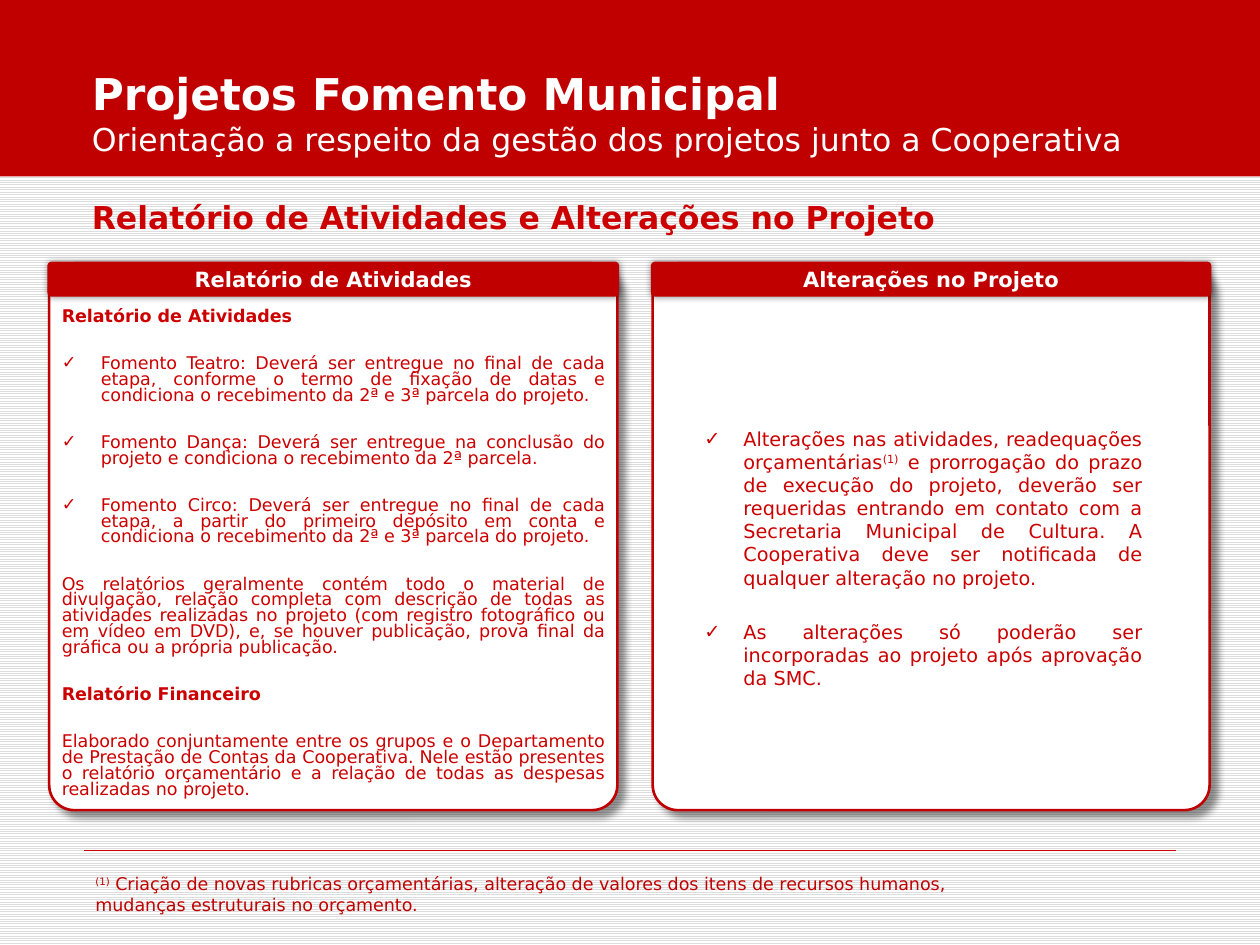
from lxml import etree
from pptx import Presentation
from pptx.dml.color import RGBColor
from pptx.enum.dml import MSO_PATTERN
from pptx.enum.shapes import MSO_CONNECTOR, MSO_SHAPE
from pptx.enum.text import MSO_ANCHOR, MSO_AUTO_SIZE, PP_ALIGN
from pptx.oxml.ns import qn
from pptx.util import Inches, Pt

TOP, MIDDLE, BOTTOM = MSO_ANCHOR.TOP, MSO_ANCHOR.MIDDLE, MSO_ANCHOR.BOTTOM
LEFT, CENTER, JUSTIFY = PP_ALIGN.LEFT, PP_ALIGN.CENTER, PP_ALIGN.JUSTIFY
COLORS = {"band": "C00000", "text": "CC0000", "white": "FFFFFF", "stripe": "DDDDDD"}
FONT = "DejaVu Sans"
HANGING = Inches(0.31)
TWO_CONTENT_LAYOUT = 3

# Each paragraph: (style, list of text runs); a run "(1)" is a note mark.
ACTIVITIES = [
    ("heading", ["Relatório de Atividades"]),
    ("check", ["Fomento Teatro: Deverá ser entregue no final de cada etapa, conforme o termo de "
               "fixação de datas e condiciona o recebimento da 2ª e 3ª parcela do projeto."]),
    ("check", ["Fomento Dança: Deverá ser entregue na conclusão do projeto e condiciona o "
               "recebimento da 2ª parcela."]),
    ("check", ["Fomento Circo: Deverá ser entregue no final de cada etapa, a partir do primeiro "
               "depósito em conta e condiciona o recebimento da 2ª e 3ª parcela do projeto."]),
    ("plain", ["Os relatórios geralmente contém todo o material de divulgação, relação completa "
               "com descrição de todas as atividades realizadas no projeto (com registro "
               "fotográfico ou em vídeo em DVD), e, se houver publicação, prova final da gráfica "
               "ou a própria publicação."]),
    ("heading", ["Relatório Financeiro"]),
    ("plain", ["Elaborado conjuntamente entre os grupos e o Departamento de Prestação de Contas "
               "da Cooperativa. Nele estão presentes o relatório orçamentário e a relação de "
               "todas as despesas realizadas no projeto."]),
]
CHANGES = [
    ("check", ["Alterações nas atividades, readequações orçamentárias", "(1)",
               " e prorrogação do prazo de execução do projeto, deverão ser requeridas entrando "
               "em contato com a Secretaria Municipal de Cultura. A Cooperativa deve ser "
               "notificada de qualquer alteração no projeto."]),
    ("check", ["As alterações só poderão ser incorporadas ao projeto após aprovação da SMC."]),
]
FOOTNOTE = ["(1)", " Criação de novas rubricas orçamentárias, alteração de valores dos itens de "
            "recursos humanos, mudanças estruturais no orçamento."]


def color(key):
    return RGBColor.from_string(COLORS[key])


def set_frame(frame, anchor=TOP):
    settings = {"word_wrap": True, "auto_size": MSO_AUTO_SIZE.NONE, "vertical_anchor": anchor}
    for name, value in settings.items():
        setattr(frame, name, value)
    return frame


def place(shape, box):
    for name, value in zip(("left", "top", "width", "height"), box):
        setattr(shape, name, Inches(value))


def next_paragraph(frame):
    first = frame.paragraphs[0]
    return frame.add_paragraph() if first.runs else first


def add_runs(paragraph, texts, size, color_key="text", bold=False):
    for text in texts:
        run = paragraph.add_run()
        run.text = text
        for name, value in {"name": FONT, "size": Pt(size), "bold": bold}.items():
            setattr(run.font, name, value)
        run.font.color.rgb = color(color_key)
        if text == "(1)":
            run.font._element.set("baseline", "30000")


def set_bullet(paragraph, char=None):
    """Give a hanging bullet, or take the inherited one away."""
    properties = paragraph._p.get_or_add_pPr()
    indent = HANGING if char else 0
    properties.set("marL", str(indent))
    properties.set("indent", str(-indent))
    if char:
        etree.SubElement(properties, qn("a:buFont"), typeface=FONT)
        etree.SubElement(properties, qn("a:buChar"), char=char)
    else:
        etree.SubElement(properties, qn("a:buNone"))


def add_shadow(shape, distance):
    effects = etree.SubElement(shape._element.spPr, qn("a:effectLst"))
    shadow = etree.SubElement(effects, qn("a:outerShdw"), blurRad=str(Pt(4)),
                              dist=str(Pt(distance)), dir="2700000", algn="tl", rotWithShape="0")
    shade = etree.SubElement(shadow, qn("a:srgbClr"), val="000000")
    etree.SubElement(shade, qn("a:alpha"), val="43000")


def add_block(shapes, kind, box, fill, line_width=0):
    block = shapes.add_shape(kind, *map(Inches, box))
    block.fill.solid()
    block.fill.fore_color.rgb = color(fill)
    if line_width:
        block.line.color.rgb = color("band")
        block.line.width = Pt(line_width)
    else:
        block.line.fill.background()
    return block


def add_card(slide, heading, left, width):
    """White rounded panel under a red heading bar."""
    shapes = slide.shapes.add_group_shape().shapes
    panel = add_block(shapes, MSO_SHAPE.ROUNDED_RECTANGLE, (left, 2.09, width, 4.34), "white", 1.5)
    bar = add_block(shapes, MSO_SHAPE.ROUNDED_RECTANGLE, (left, 2.09, width, 0.25), "band", 2)
    for block, corner, distance in ((panel, 0.046, 5), (bar, 0.079, 0)):
        block.adjustments[0] = corner
        add_shadow(block, distance)
    paragraph = set_frame(bar.text_frame, MIDDLE).paragraphs[0]
    paragraph.alignment = CENTER
    add_runs(paragraph, [heading], 12, "white", True)


def fill_list(slide, body, box, items, size, line_spacing=1.0):
    slide.shapes._spTree.append(body._element)  # in front of its card
    place(body, box)
    frame = set_frame(body.text_frame)
    for number, (style, texts) in enumerate(items):
        paragraph = next_paragraph(frame)
        layout = {"alignment": JUSTIFY, "line_spacing": line_spacing,
                  "space_before": Pt(18 if number else 0)}
        for name, value in layout.items():
            setattr(paragraph, name, value)
        set_bullet(paragraph, "✓" if style == "check" else None)
        add_runs(paragraph, texts, size, bold=style == "heading")


def fill_title(slide):
    title = slide.shapes.title
    slide.shapes._spTree.append(title._element)  # in front of the band
    place(title, (0.63, -0.03, 8.75, 1.33))
    frame = set_frame(title.text_frame, BOTTOM)
    for text, size, bold in (
        ("Projetos Fomento Municipal", 25, True),
        ("Orientação a respeito da gestão dos projetos junto a Cooperativa", 18, False),
    ):
        paragraph = next_paragraph(frame)
        paragraph.alignment = LEFT
        add_runs(paragraph, [text], size, "white", bold)


def add_label(slide, box, texts, size, color_key, bold=False):
    label = slide.shapes.add_textbox(*map(Inches, box))
    add_runs(set_frame(label.text_frame).paragraphs[0], texts, size, color_key, bold)


def add_rule(slide, left, right, top):
    rule = slide.shapes.add_connector(
        MSO_CONNECTOR.STRAIGHT, Inches(left), Inches(top), Inches(right), Inches(top))
    rule.line.color.rgb = color("text")
    rule.line.width = Pt(0.25)
    etree.SubElement(rule._element.spPr, qn("a:effectLst"))


def set_striped_background(slide):
    fill = slide.background.fill
    fill.patterned()
    fill.pattern = MSO_PATTERN.LIGHT_HORIZONTAL
    fill.fore_color.rgb = color("stripe")
    fill.back_color.rgb = color("white")


def main():
    deck = Presentation()
    deck.slide_width, deck.slide_height = Inches(10), Inches(7.5)
    slide = deck.slides.add_slide(deck.slide_layouts[TWO_CONTENT_LAYOUT])
    activities_body, changes_body = slide.placeholders[1], slide.placeholders[2]

    set_striped_background(slide)
    add_rule(slide, 0.67, 9.33, 6.75)
    band = add_block(slide.shapes, MSO_SHAPE.RECTANGLE, (0, 0, 10, 1.4), "band")
    band.shadow.inherit = False
    fill_title(slide)
    add_label(slide, (0.63, 1.52, 8.31, 0.4),
              ["Relatório de Atividades e Alterações no Projeto"], 18, "text", True)

    add_card(slide, "Alterações no Projeto", 5.18, 4.42)
    fill_list(slide, changes_body, (5.49, 3.34, 3.68, 2.2), CHANGES, 11)
    add_card(slide, "Relatório de Atividades", 0.39, 4.51)
    fill_list(slide, activities_body, (0.39, 2.41, 4.51, 4.01), ACTIVITIES, 10, Pt(9))
    add_label(slide, (0.66, 6.88, 7.03, 0.44), FOOTNOTE, 10, "band")

    deck.save("out.pptx")


if __name__ == "__main__":
    main()
